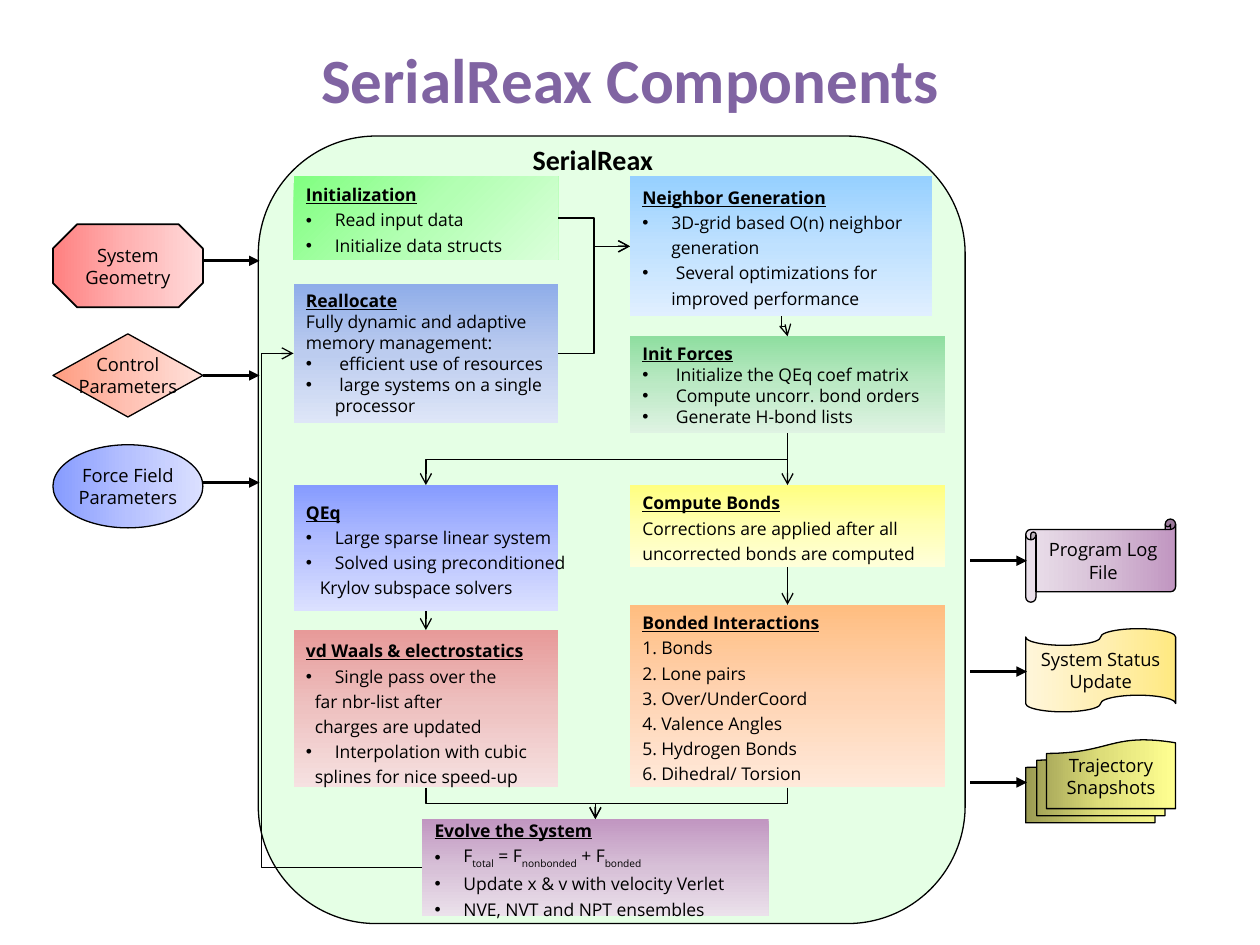
from dataclasses import dataclass
from typing import NamedTuple, Optional

from lxml import etree
from pptx import Presentation
from pptx import util as u
from pptx.dml.color import RGBColor
from pptx.enum import shapes, text
from pptx.oxml.ns import qn

COLUMNS, ROWS = 100, 75
CELL = u.Inches(10) // COLUMNS
TOP, LEFT, BOTTOM, RIGHT = range(4)
Shape = shapes.MSO_SHAPE
Kind = shapes.MSO_CONNECTOR
MIDDLE = text.MSO_ANCHOR.MIDDLE
CENTER = text.PP_ALIGN.CENTER


@dataclass(frozen=True)
class Theme:
    ink: str = "000000"
    title: str = "8064A2"
    container: str = "00FF00"
    heading_font: str = "Calibri"
    body_font: str = "Open Sans"
    title_size: float = 36
    label_size: float = 16
    node_size: float = 10.5
    body_size: float = 10
    thin: float = 0.75
    thick: float = 1.5


THEME = Theme()


class Line(NamedTuple):
    """A paragraph; bullet is a character, "1." for numbering, or empty."""
    words: str
    bullet: str = ""
    margin: float = 0
    subscripts: tuple = ()


class Box(NamedTuple):
    area: tuple
    colors: str
    heading: str
    lines: list
    spacing: float = 1.2
    wrap: bool = False
    angle: int = 90


class Node(NamedTuple):
    """An input or output; row is its top and arrow_row the height of its arrow."""
    preset: Shape
    row: float
    arrow_row: float
    colors: str
    words: str
    outline: float = THEME.thin
    turn: int = 0


def bullets(*lines: str) -> list:
    return [Line(line, "•") for line in lines]


def cells(*lengths: float) -> list:
    return [u.Emu(round(length * CELL)) for length in lengths]


def child(parent, tag: str, **attributes):
    return etree.SubElement(parent, qn(tag), {k: str(v) for k, v in attributes.items()})


def set_gradient(shape, colors: str, angle: int) -> None:
    shape.fill.gradient()
    gradient = shape._element.spPr.find(qn("a:gradFill"))
    for part in list(gradient):
        gradient.remove(part)
    gradient.set("rotWithShape", "1")
    stops = child(gradient, "a:gsLst")
    for share, color in zip((0, 50, 100), colors.split()):
        child(child(stops, "a:gs", pos=share * 1000), "a:srgbClr", val=color)
    child(gradient, "a:lin", ang=angle * 60000, scaled=0)


def write(paragraph, words: str, *, size: float = THEME.body_size, font: str = THEME.body_font,
          color: str = THEME.ink, bold: bool = False, underline: bool = False,
          subscript: bool = False) -> None:
    run = paragraph.add_run()
    run.text = words
    run.font.size, run.font.name = u.Pt(size), font
    run.font.bold, run.font.underline = bold, underline
    run.font.color.rgb = RGBColor.from_string(color)
    if subscript:
        run._r.get_or_add_rPr().set("baseline", "-25000")


def set_indent(paragraph, margin: float, hanging: float, bullet: str) -> None:
    properties = paragraph._p.get_or_add_pPr()
    properties.set("marL", str(u.Inches(margin)))
    properties.set("indent", str(-u.Inches(hanging)))
    if bullet == "1.":
        child(properties, "a:buFont", typeface="+mj-lt")
        child(properties, "a:buAutoNum", type="arabicPeriod")
    elif bullet:
        child(properties, "a:buFont", typeface="Arial")
        child(properties, "a:buChar", char=bullet)


def add_shape(slide, preset: Shape, area: tuple, outline: Optional[float] = None):
    shape = slide.shapes.add_shape(preset, *cells(*area))
    shape.shadow.inherit = False
    if outline is None:
        shape.line.fill.background()
    else:
        shape.line.color.rgb = RGBColor.from_string(THEME.ink)
        shape.line.width = u.Pt(outline)
    return shape


def add_box(slide, box: Box):
    shape = add_shape(slide, Shape.RECTANGLE, box.area)
    set_gradient(shape, box.colors, box.angle)
    frame = shape.text_frame
    frame.word_wrap = box.wrap
    frame.vertical_anchor = text.MSO_ANCHOR.TOP if box.wrap else MIDDLE
    for index, line in enumerate([Line(box.heading), *box.lines]):
        paragraph = frame.add_paragraph() if index else frame.paragraphs[0]
        paragraph.alignment = text.PP_ALIGN.LEFT
        paragraph.line_spacing = box.spacing
        hanging = {"•": 0.23, "1.": 0.15}.get(line.bullet, 0)
        set_indent(paragraph, hanging or line.margin, hanging, line.bullet)
        write(paragraph, line.words, bold=index == 0, underline=index == 0)
        for position, words in enumerate(line.subscripts):
            write(paragraph, words, subscript=position % 2 == 0)
    return shape


def style_connector(connector, width: float, head: str) -> None:
    connector.line.color.rgb = RGBColor.from_string(THEME.ink)
    connector.line.width = u.Pt(width)
    child(connector.line._get_or_add_ln(), "a:tailEnd", type=head)
    child(connector._element.spPr, "a:effectLst")


def add_node(slide, node: Node, column: float, arrow_column: float, angle: int) -> None:
    shape = add_shape(slide, node.preset, (column, node.row, 11.9, 6.6), node.outline)
    set_gradient(shape, node.colors, angle)
    shape.rotation = node.turn
    frame = shape.text_frame
    frame.word_wrap, frame.vertical_anchor = False, MIDDLE
    if node.turn:
        frame._txBody.bodyPr.set("rot", str(node.turn * 60000))
    for index, words in enumerate(node.words.split("\n")):
        paragraph = frame.add_paragraph() if index else frame.paragraphs[0]
        paragraph.alignment = CENTER
        write(paragraph, words, size=THEME.node_size)
    arrow = slide.shapes.add_connector(Kind.STRAIGHT, *cells(
        arrow_column, node.arrow_row, arrow_column + 4.5, node.arrow_row))
    style_connector(arrow, THEME.thick, "triangle")


def link(slide, start, start_side: int, end, end_side: int, bend: float = 0.5) -> None:
    """Join two boxes, straight if one is right below the other, else by an elbow."""
    vertical = start_side == BOTTOM
    offset = (end.left + end.width // 2) - (start.left + start.width // 2)
    straight = vertical and abs(offset) < CELL // 10
    connector = slide.shapes.add_connector(Kind.STRAIGHT if straight else Kind.ELBOW, 0, 0, 0, 0)
    connector.begin_connect(start, start_side)
    connector.end_connect(end, end_side)
    if not straight:
        frame = connector._element.spPr.find(qn("a:xfrm"))
        if vertical:
            middle_x = (connector.begin_x + connector.end_x) // 2
            middle_y = (connector.begin_y + connector.end_y) // 2
            width, height = connector.height, connector.width
            connector.left, connector.top = middle_x - width // 2, middle_y - height // 2
            connector.width, connector.height = width, height
            for name in ("flipH", "flipV"):
                frame.attrib.pop(name, None)
            frame.set("rot", str((270 if offset > 0 else 90) * 60000))
            if offset > 0:
                frame.set("flipH", "1")
        geometry = connector._element.spPr.find(qn("a:prstGeom"))
        for guides in geometry.findall(qn("a:avLst")):
            geometry.remove(guides)
        child(child(geometry, "a:avLst"), "a:gd", name="adj1", fmla=f"val {round(bend * 100000)}")
    style_connector(connector, THEME.thin, "arrow")


INPUTS = [
    Node(Shape.OCTAGON, 17.8, 20.7, "FF8080 FFB3B3 FFDADA", "System\nGeometry", 1),
    Node(Shape.DIAMOND, 26.5, 29.8, "FF9C80 FFC1B3 FFE1DA", "Control\nParameters"),
    Node(Shape.OVAL, 35.3, 38.3, "869BFF B6C1FF DBE0FF", "Force Field\nParameters"),
]
OUTPUTS = [
    Node(Shape.HORIZONTAL_SCROLL, 41.2, 44.5, "C196C1 D7C0D7 EBE1EB", "Program Log\nFile"),
    Node(Shape.FLOWCHART_PUNCHED_TAPE, 49.9, 53.3, "FFE980 FFEFB3 FFF6DA",
         "System Status\nUpdate"),
    Node(Shape.FLOWCHART_MULTIDOCUMENT, 58.7, 62.1, "9A9A52 DDDD79 FFFF91",
         "Trajectory\nSnapshots", turn=180),
]
BOXES = [
    Box((23.3, 14, 21, 6.6), "80FF80 B3FFB3 DAFFDA", "Initialization",
        bullets("Read input data", "Initialize data structs"), angle=45),
    Box((23.3, 22.5, 21, 11.1), "8FADE9 BCCCEF DEE6F7", "Reallocate",
        [Line("Fully dynamic and adaptive memory management:"),
         *bullets(" efficient use of resources", " large systems on a single processor")], 1, True),
    Box((50, 14, 24, 11.1), "96D0FF BFE1FF E0EFFF", "Neighbor Generation",
        bullets("3D-grid based O(n) neighbor generation",
                " Several optimizations for improved performance"), wrap=True),
    Box((50, 26.7, 25, 7.7), "8FDEA0 BCE9C5 DFF3E3", "Init Forces",
        bullets(" Initialize the QEq coef matrix", " Compute uncorr. bond orders",
                " Generate H-bond lists"), 1, True),
    Box((23.3, 38.5, 21, 10), "869BFF B6C1FF DBE0FF", "QEq",
        [*bullets("Large sparse linear system", "Solved using preconditioned"),
         Line("Krylov subspace solvers", margin=0.11)]),
    Box((50, 38.5, 25, 6.5), "FFFF80 FFFFB3 FFFFDA", "Compute Bonds",
        [Line("Corrections are applied after all"), Line("uncorrected bonds are computed")]),
    Box((23.3, 50, 21, 12.5), "E79A99 EEC2C1 F6E1E1", "vd Waals & electrostatics",
        [Line("Single pass over the", "•"), Line("far nbr-list after", margin=0.07),
         Line("charges are updated", margin=0.07), Line("Interpolation with cubic", "•"),
         Line("splines for nice speed-up", margin=0.07)], wrap=True),
    Box((50, 48, 25, 14.5), "FFBD80 FFD4B3 FFE9DA", "Bonded Interactions",
        [Line(words, "1.") for words in ("Bonds", "Lone pairs", "Over/UnderCoord",
                                         "Valence Angles", "Hydrogen Bonds", "Dihedral/ Torsion")]),
    Box((33.5, 65, 27.5, 7.7), "C196C1 D7C0D7 EBE1EB", "Evolve the System",
        [Line("F", "•", subscripts=("total", " = F", "nonbonded", " + F", "bonded")),
         *bullets("Update x & v with velocity Verlet", "NVE, NVT and NPT ensembles")]),
]


def main() -> None:
    presentation = Presentation()
    presentation.slide_width, presentation.slide_height = cells(COLUMNS, ROWS)
    slide = presentation.slides.add_slide(presentation.slide_layouts[5])

    title = slide.shapes.title
    title.left, title.top, title.width, title.height = cells(0, 0, COLUMNS, 12.5)
    title.text_frame.vertical_anchor = MIDDLE
    title.text_frame.paragraphs[0].alignment = CENTER
    write(title.text_frame.paragraphs[0], "SerialReax Components", size=THEME.title_size,
          font=THEME.heading_font, color=THEME.title, bold=True)

    container = add_shape(slide, Shape.ROUNDED_RECTANGLE, (20.5, 10.8, 56.1, 62.5), THEME.thin)
    container.fill.solid()
    container.fill.fore_color.rgb = RGBColor.from_string(THEME.container)
    child(container._element.spPr.find(qn("a:solidFill"))[0], "a:alpha", val=10000)
    label = slide.shapes.add_textbox(*cells(40.8, 10.8, 12.5, 3.7)).text_frame
    label.word_wrap = True
    label.paragraphs[0].alignment = CENTER
    write(label.paragraphs[0], "SerialReax", size=THEME.label_size,
          font=THEME.heading_font, bold=True)

    for node in INPUTS:
        add_node(slide, node, column=4.2, arrow_column=16.1, angle=0)
    for node in OUTPUTS:
        add_node(slide, node, column=81.4, arrow_column=77, angle=180)

    (initialization, reallocate, neighbors, init_forces, qeq, compute_bonds,
     van_der_waals, interactions, evolve) = [add_box(slide, box) for box in BOXES]
    for start, end in ((initialization, neighbors), (reallocate, neighbors)):
        link(slide, start, RIGHT, end, LEFT)
    for start, end in ((neighbors, init_forces), (init_forces, qeq), (init_forces, compute_bonds),
                       (compute_bonds, interactions), (qeq, van_der_waals),
                       (van_der_waals, evolve), (interactions, evolve)):
        link(slide, start, BOTTOM, end, TOP)
    link(slide, evolve, LEFT, reallocate, LEFT, bend=1.25)

    presentation.save("out.pptx")


if __name__ == "__main__":
    main()
